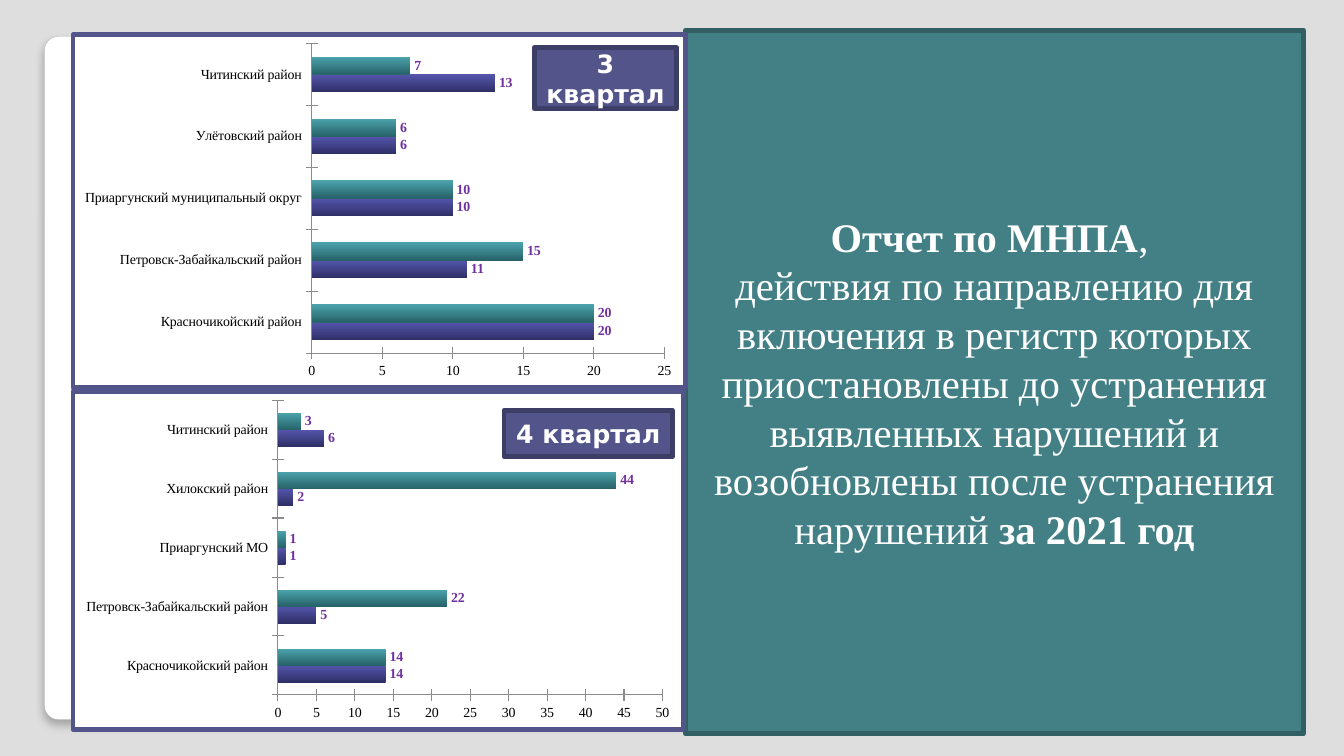
from dataclasses import dataclass

from lxml import etree
from pptx import Presentation
from pptx import util as u
from pptx.chart import data as chart_data
from pptx.dml import color
from pptx.enum import chart as charts, shapes, text
from pptx.oxml import ns, parse_xml


@dataclass(frozen=True)
class Theme:
    """Colours, fonts and sizes of the slide."""
    backdrop: str = "DEDEDE"
    white: str = "FFFFFF"
    black: str = "000000"
    purple: str = "53548A"
    purple_edge: str = "3D3E66"
    teal: str = "438086"
    teal_edge: str = "325F63"
    value: str = "7030A0"
    axis: str = "8B8B8B"
    card_edge: str = "A4A4A4"
    bars: tuple = (("5556AC", "2F2F68"), ("4BA3AC", "28636A"))
    serif: str = "Times New Roman"
    sans: str = "DejaVu Sans"
    title_size: float = 29
    badge_size: float = 18
    chart_size: float = 10
    border: float = 3.35


THEME = Theme()

QUARTERS = (
    {
        "box": (0.7, 0.32, 6.12, 3.55),
        "plot": (0.39, 0.025, 0.576, 0.877),
        "districts": ("Красночикойский район", "Петровск-Забайкальский район",
                      "Приаргунский муниципальный округ", "Улётовский район",
                      "Читинский район"),
        "values": ((20, 11, 10, 6, 13), (20, 15, 10, 6, 7)),
        "scale": (25, 5),
        "badge": ("3 квартал", (4.6, 0.15, 1.41, 0.61)),
    },
    {
        "box": (0.7, 3.86, 6.1, 3.4),
        "plot": (0.336, 0.026, 0.63, 0.872),
        "districts": ("Красночикойский район", "Петровск-Забайкальский район",
                      "Приаргунский МО", "Хилокский район", "Читинский район"),
        "values": ((14, 5, 1, 2, 6), (14, 22, 1, 44, 3)),
        "scale": (50, 5),
        "badge": ("4 квартал", (4.3, 0.21, 1.67, 0.46)),
    },
)

TITLE_SPANS = (
    ("Отчет по МНПА", True),
    (", ", False),
    (None, False),
    ("действия по направлению для включения в регистр которых приостановлены "
     "до устранения выявленных нарушений и возобновлены после устранения "
     "нарушений ", False),
    ("за 2021 год", True),
)


def assign(target, values):
    """Set each named attribute of the target."""
    for name, value in values.items():
        setattr(target, name, value)


def style_font(font, name, size, shade, bold=False):
    """Format a font."""
    assign(font, {"name": name, "size": u.Pt(size), "bold": bold})
    font.color.rgb = color.RGBColor.from_string(shade)


def add_block(page, box, fill, edge, width, kind=shapes.MSO_SHAPE.RECTANGLE):
    """Add a filled, outlined shape in the given box."""
    block = page.shapes.add_shape(kind, *map(u.Inches, box))
    block.shadow.inherit = False
    block.fill.solid()
    block.fill.fore_color.rgb = color.RGBColor.from_string(fill)
    block.line.color.rgb = color.RGBColor.from_string(edge)
    block.line.width = u.Pt(width)
    return block


def add_text(block, spans, name, size):
    """Write centred white spans into a block; None breaks the line."""
    frame = block.text_frame
    assign(frame, {"word_wrap": True, "vertical_anchor": text.MSO_ANCHOR.MIDDLE})
    para = frame.paragraphs[0]
    para.alignment = text.PP_ALIGN.CENTER
    for words, bold in spans:
        if words is None:
            para.add_line_break()
            continue
        span = para.add_run()
        span.text = words
        style_font(span.font, name, size, THEME.white, bold)


def add_card(page, box):
    """Place the rounded white card with its soft shadow."""
    card = add_block(page, box, THEME.white, THEME.card_edge, 0.16,
                     shapes.MSO_SHAPE.ROUNDED_RECTANGLE)
    card.adjustments[0] = 0.021
    effects = card._element.spPr.find(ns.qn("a:effectLst"))
    shadow = etree.SubElement(effects, ns.qn("a:outerShdw"), blurRad=str(u.Pt(6)),
                              dist=str(u.Pt(4)), dir="5400000", rotWithShape="0")
    shade = etree.SubElement(shadow, ns.qn("a:srgbClr"), val=THEME.black)
    etree.SubElement(shade, ns.qn("a:alpha"), val="25000")


def add_title_panel(page, box):
    """Place the teal panel with the report title."""
    panel = add_block(page, box, THEME.teal, THEME.teal_edge, THEME.border)
    add_text(panel, TITLE_SPANS, THEME.serif, THEME.title_size)


def frame_chart(chart, plot):
    """Give the chart its background, border and inner plot position."""
    space = chart._chartSpace
    space.find(ns.qn("c:chart")).addnext(parse_xml(
        f'<c:spPr {ns.nsdecls("c", "a")}><a:solidFill><a:srgbClr val="{THEME.white}"/>'
        f'</a:solidFill><a:ln w="{u.Pt(THEME.border)}"><a:solidFill>'
        f'<a:srgbClr val="{THEME.purple}"/></a:solidFill></a:ln></c:spPr>'))
    area = space.find(".//" + ns.qn("c:plotArea"))
    for old in area.findall(ns.qn("c:layout")):
        area.remove(old)
    layout = etree.Element(ns.qn("c:layout"))
    manual = etree.SubElement(layout, ns.qn("c:manualLayout"))
    settings = [("layoutTarget", "inner"), ("xMode", "edge"), ("yMode", "edge")]
    settings += zip("xywh", plot)
    for name, value in settings:
        etree.SubElement(manual, ns.qn(f"c:{name}"), val=str(value))
    area.insert(0, layout)


def style_series(series, shades):
    """Fill the bars with a gradient and show their values."""
    series.format.fill.gradient()
    series.format.fill.gradient_angle = 270
    for stop, shade in zip(series.format.fill.gradient_stops, shades):
        stop.color.rgb = color.RGBColor.from_string(shade)
    labels = series.data_labels
    assign(labels, {"show_value": True,
                    "position": charts.XL_LABEL_POSITION.OUTSIDE_END})
    style_font(labels.font, THEME.serif, THEME.chart_size, THEME.value, True)


def add_quarter(page, box, plot, districts, values, scale, badge):
    """Place one quarter's bar chart and its badge inside the box."""
    source = chart_data.CategoryChartData()
    source.categories = districts
    for number, row in enumerate(values, 1):
        source.add_series(f"Series {number}", row)
    chart = page.shapes.add_chart(charts.XL_CHART_TYPE.BAR_CLUSTERED,
                                  *map(u.Inches, box), source).chart
    assign(chart, {"has_legend": False, "has_title": False})
    style_font(chart.font, THEME.serif, THEME.chart_size, THEME.black)
    assign(chart.plots[0], {"gap_width": 150, "overlap": 0, "vary_by_categories": False})
    for axis in (chart.category_axis, chart.value_axis):
        assign(axis, {"has_major_gridlines": False,
                      "major_tick_mark": charts.XL_TICK_MARK.CROSS})
        axis.format.line.color.rgb = color.RGBColor.from_string(THEME.axis)
    top, step = scale
    assign(chart.value_axis, {"minimum_scale": 0, "maximum_scale": top, "major_unit": step})
    for series, shades in zip(chart.plots[0].series, THEME.bars):
        style_series(series, shades)
    frame_chart(chart, plot)

    words, (left, upper, width, height) = badge
    label = add_block(page, (box[0] + left, box[1] + upper, width, height),
                      THEME.purple, THEME.purple_edge, THEME.border)
    add_text(label, ((words, True),), THEME.sans, THEME.badge_size)


def main():
    """Build and save the slide."""
    deck = Presentation()
    assign(deck, {"slide_width": u.Inches(13.33), "slide_height": u.Inches(7.5)})
    page = deck.slides.add_slide(deck.slide_layouts[6])
    page.background.fill.solid()
    page.background.fill.fore_color.rgb = color.RGBColor.from_string(THEME.backdrop)
    add_card(page, (0.44, 0.36, 12.44, 6.78))
    add_title_panel(page, (6.8, 0.3, 6.13, 6.98))
    for quarter in QUARTERS:
        add_quarter(page, **quarter)
    deck.save("out.pptx")


if __name__ == "__main__":
    main()
